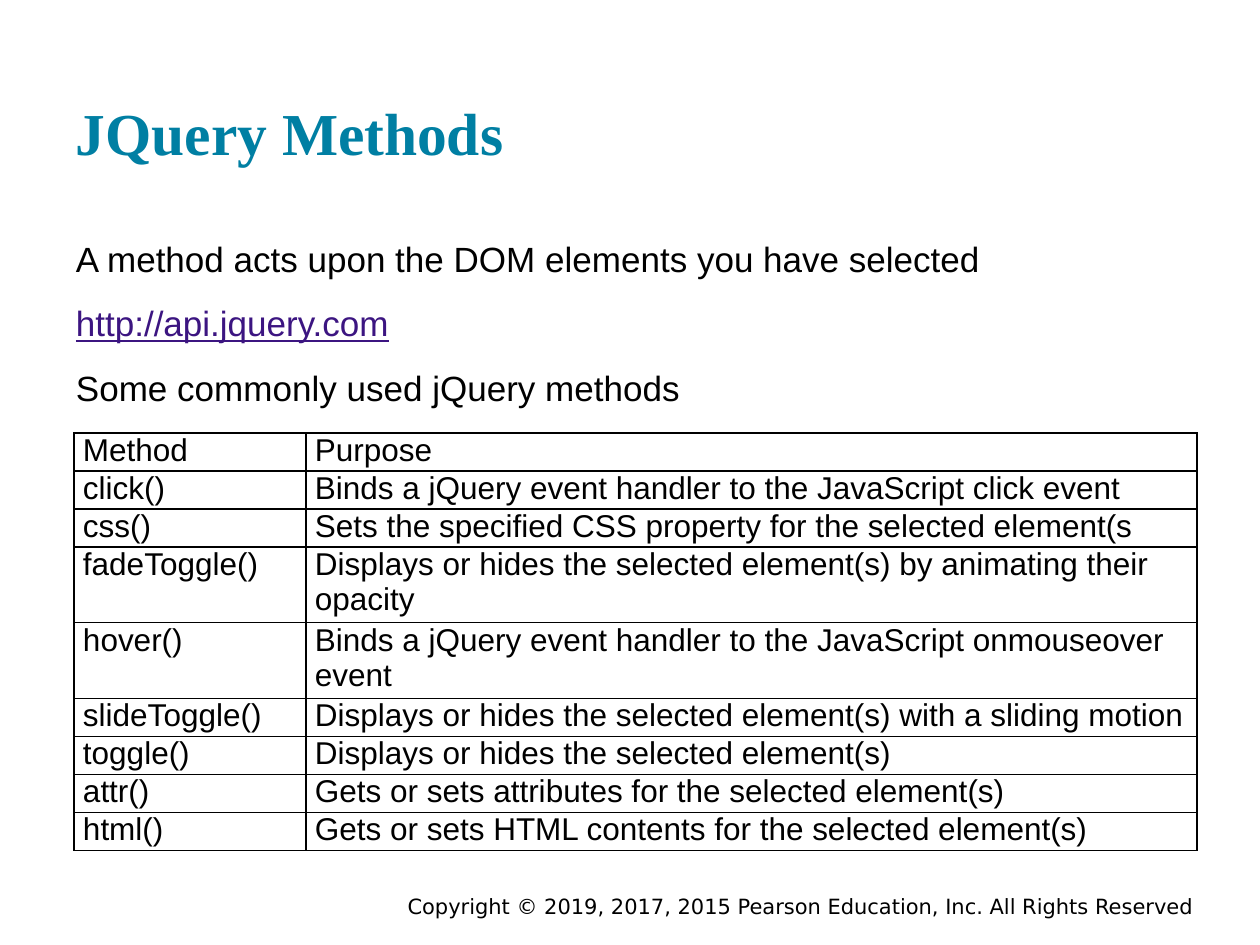
from lxml.etree import SubElement
from pptx import Presentation
from pptx.dml.color import RGBColor
from pptx.enum.text import MSO_ANCHOR, PP_ALIGN
from pptx.oxml.ns import qn
from pptx.util import Emu, Pt

EMU_PER_INCH = 914400
PX_PER_INCH = 126
BLACK, WHITE, TEAL, PURPLE = "000000", "FFFFFF", "007FA3", "3C1581"
COLUMN_WIDTHS = [232, 891]
LINE_ROW, WRAPPED_ROW = 38, 75
METHODS = [
    ("Method", "Purpose", LINE_ROW),
    ("click()", "Binds a jQuery event handler to the JavaScript click event", LINE_ROW),
    ("css()", "Sets the specified CSS property for the selected element(s", LINE_ROW),
    ("fadeToggle()", "Displays or hides the selected element(s) by animating their opacity", WRAPPED_ROW),
    ("hover()", "Binds a jQuery event handler to the JavaScript onmouseover event", WRAPPED_ROW),
    ("slideToggle()", "Displays or hides the selected element(s) with a sliding motion", LINE_ROW),
    ("toggle()", "Displays or hides the selected element(s)", LINE_ROW),
    ("attr()", "Gets or sets attributes for the selected element(s)", LINE_ROW),
    ("html()", "Gets or sets HTML contents for the selected element(s)", LINE_ROW),
]


def px(length):
    """Turn a length in px into EMU."""
    return Emu(round(length * EMU_PER_INCH / PX_PER_INCH))


def color(hex_string):
    """Turn a hex string into a colour."""
    return RGBColor.from_string(hex_string)


def write(paragraph, text, size=20, font="Arial", fill=BLACK, bold=False,
          underline=False, align=PP_ALIGN.LEFT, before=0):
    """Write one formatted run into a paragraph."""
    paragraph.alignment = align
    paragraph.space_before = Pt(before)
    run = paragraph.add_run()
    run.text = text
    run.font.size = Pt(size)
    run.font.name = font
    run.font.bold = bold
    run.font.underline = underline
    run.font.color.rgb = color(fill)


def add_text_box(slide, left, top, width, height, anchor=MSO_ANCHOR.TOP):
    """Add an empty wrapping text box and return its text frame."""
    frame = slide.shapes.add_textbox(px(left), px(top), px(width), px(height)).text_frame
    frame.word_wrap = True
    frame.vertical_anchor = anchor
    frame.margin_left = frame.margin_right = px(13)
    frame.margin_top = frame.margin_bottom = px(13)
    return frame


def add_borders(cell):
    """Draw a thin black line on every side of a cell."""
    properties = cell._tc.get_or_add_tcPr()
    for index, side in enumerate(("a:lnL", "a:lnR", "a:lnT", "a:lnB")):
        line = properties.makeelement(qn(side), {"w": str(Pt(1))})
        fill = SubElement(line, qn("a:solidFill"))
        SubElement(fill, qn("a:srgbClr"), val=BLACK)
        properties.insert(index, line)


def fill_cell(cell, text):
    """Give a cell its text, fill, margins and borders."""
    cell.margin_left = cell.margin_right = px(9)
    cell.margin_top = cell.margin_bottom = 0
    cell.fill.solid()
    cell.fill.fore_color.rgb = color(WHITE)
    write(cell.text_frame.paragraphs[0], text, size=18)
    add_borders(cell)


def add_method_table(slide, left, top):
    """Add the table of methods and their purposes."""
    heights = [height for *_, height in METHODS]
    table = slide.shapes.add_table(
        len(METHODS), len(COLUMN_WIDTHS), px(left), px(top),
        px(sum(COLUMN_WIDTHS)), px(sum(heights))).table
    table.first_row = table.horz_banding = False
    for column, width in zip(table.columns, COLUMN_WIDTHS):
        column.width = px(width)
    for row, (method, purpose, height) in zip(table.rows, METHODS):
        row.height = px(height)
        for cell, text in zip(row.cells, (method, purpose)):
            fill_cell(cell, text)


def add_body(slide):
    """Add the three lines that introduce the table."""
    frame = add_text_box(slide, 63, 224, 1134, 195)
    write(frame.paragraphs[0], "A method acts upon the DOM elements you have selected")
    write(frame.add_paragraph(), "http://api.jquery.com", fill=PURPLE, underline=True, before=13)
    write(frame.add_paragraph(), "Some commonly used jQuery methods", before=13)


def main():
    """Build the slide and save it."""
    presentation = Presentation()
    presentation.slide_width, presentation.slide_height = px(1260), px(945)
    slide = presentation.slides.add_slide(presentation.slide_layouts[6])
    footer = add_text_box(slide, 374, 891, 833, 31, anchor=MSO_ANCHOR.MIDDLE)
    footer.margin_top = footer.margin_bottom = 0
    write(footer.paragraphs[0],
          "Copyright © 2019, 2017, 2015 Pearson Education, Inc. All Rights Reserved",
          size=12, font="DejaVu Sans", align=PP_ALIGN.RIGHT)
    title = add_text_box(slide, 63, 83, 1134, 97, anchor=MSO_ANCHOR.BOTTOM)
    write(title.paragraphs[0], "JQuery Methods", size=34, font="Times New Roman",
          fill=TEAL, bold=True)
    add_body(slide)
    add_method_table(slide, 74, 433)
    presentation.save("out.pptx")


if __name__ == "__main__":
    main()
